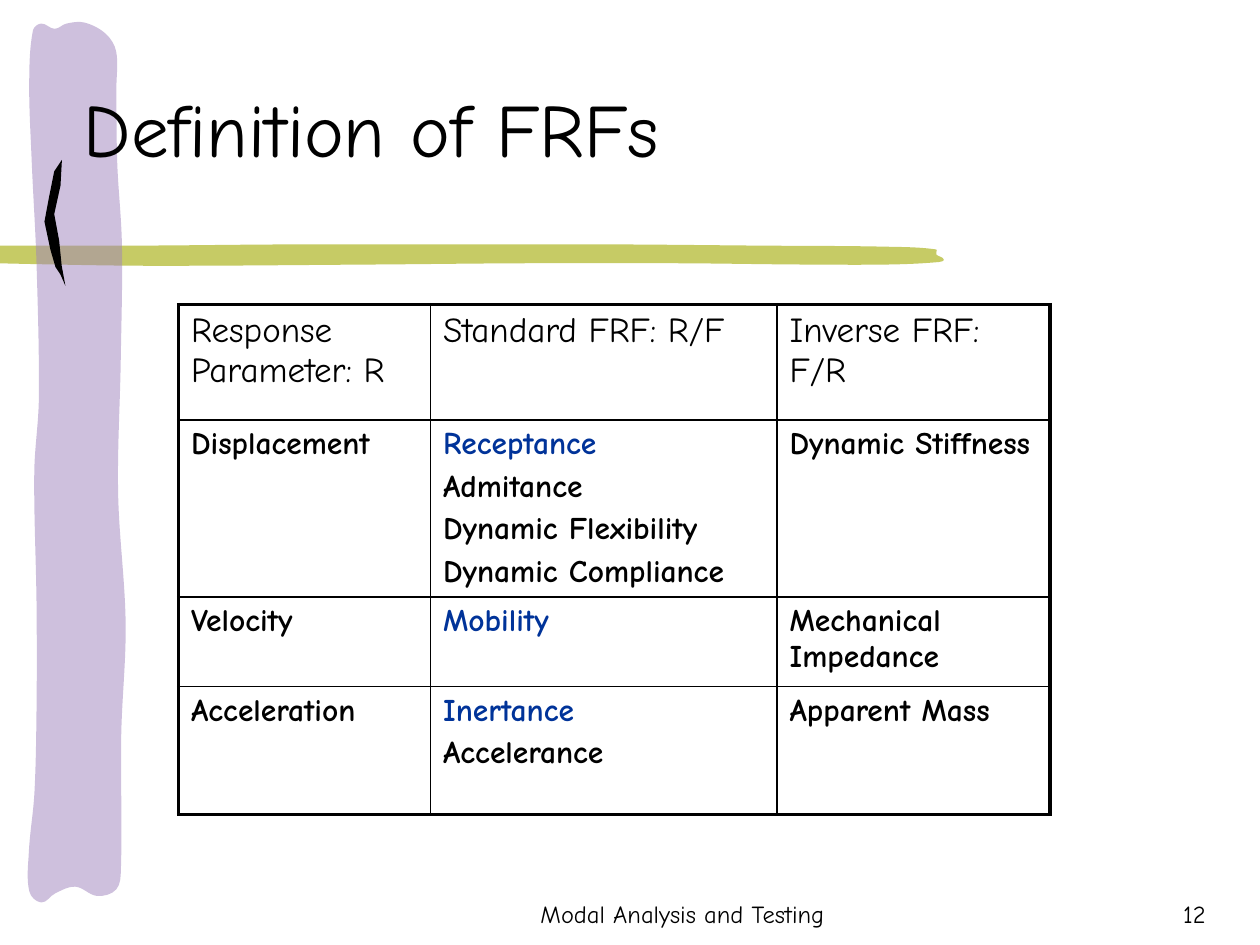
import math

from lxml import etree
from pptx import Presentation
from pptx.dml.color import RGBColor
from pptx.enum import text
from pptx.oxml import ns
from pptx.util import Pt

FONT = "Comic Neue"
COLORS = {"ink": "000000", "accent": "003399", "olive": "C6CB65", "lilac": "9F83BD"}
THIN, THICK = 1, 2.25

# Outlines, in points
OLIVE_STROKE = [
    (433, 140.4), (505, 141), (535, 142.6), (535, 145.4), (539.3, 148.3),
    (536.4, 149.8), (508, 151.2), (457, 151.2), (389.5, 150.5), (298, 150.5),
    (214.6, 151.2), (80, 151.9), (-1.4, 150.5), (-2.2, 140.4), (80, 140.4),
    (167, 139.7), (281.5, 139.7), (352, 139.7),
]
OLIVE_CORNERS = {(-1.4, 150.5), (-2.2, 140.4)}
LILAC_STROKE = [
    (20.9, 403.9), (20.9, 346.3), (19.6, 270), (22.2, 228), (20.9, 151.2),
    (18.1, 91.4), (16.7, 46.8), (18.9, 17.3), (23.6, 13.5), (31.2, 16.5),
    (38, 13.5), (48.2, 12.9), (60.5, 19.4), (66.4, 29.5), (66.5, 51),
    (67, 92.9), (69.7, 140.4), (69, 206), (67.5, 281.5), (71.8, 356.4),
    (69.3, 419.8), (69.1, 496.8), (66.4, 508.3), (55.6, 512), (43, 506.7),
    (31.6, 510.5), (23.6, 515.7), (16.8, 509.5), (16.5, 486.7), (19.7, 453),
]
INK_MARK = [
    (35.4, 91.4), (34.6, 106), (31, 122.4), (33.8, 137.5), (35.3, 152), (37.4, 163.4),
    (34.6, 157), (31.7, 152.6), (28.8, 142.6), (25.4, 126.7), (28.1, 112.3), (31, 98),
]

# Table content: one list of paragraphs per cell
ROWS = [
    [["Response Parameter: R"], ["Standard FRF: R/F"], ["Inverse FRF: F/R"]],
    [["Displacement"],
     ["Receptance", "Admitance", "Dynamic Flexibility", "Dynamic Compliance"],
     ["Dynamic Stiffness"]],
    [["Velocity"], ["Mobility"], ["Mechanical Impedance"]],
    [["Acceleration"], ["Inertance", "Accelerance"], ["Apparent Mass"]],
]
HIGHLIGHTS = {"Receptance", "Mobility", "Inertance"}
COLUMN_WIDTHS = [144, 198, 156]
ROW_HEIGHTS = [66, 101, 51.2, 73]


def rgb(name):
    return RGBColor.from_string(COLORS[name])


def write(para, words, size=18, bold=False, color="ink", align=text.PP_ALIGN.LEFT):
    span = para.add_run()
    span.text = words
    para.alignment = align
    span.font.name = FONT
    span.font.size = Pt(size)
    span.font.bold = bold
    span.font.color.rgb = rgb(color)


def curve_outline(shape, points, corners):
    """Turn the straight segments into Bezier curves through the same points."""
    def tangent(i):
        if points[i] in corners:
            return 0, 0
        (x0, y0), (x1, y1) = points[i - 1], points[(i + 1) % len(points)]
        length = math.hypot(x1 - x0, y1 - y0)
        return (x1 - x0) / length, (y1 - y0) / length

    left, top = (min(point[k] for point in points) for k in (0, 1))
    outline = shape._element.spPr.find(".//" + ns.qn("a:path"))
    for line in outline.findall(ns.qn("a:lnTo")):
        outline.remove(line)
    closing = outline.find(ns.qn("a:close"))
    for i, start in enumerate(points):
        following = (i + 1) % len(points)
        end = points[following]
        handle = math.dist(start, end) / 3
        leave, arrive = tangent(i), tangent(following)
        curve = etree.Element(ns.qn("a:cubicBezTo"))
        for x, y in (
            (start[0] + handle * leave[0], start[1] + handle * leave[1]),
            (end[0] - handle * arrive[0], end[1] - handle * arrive[1]),
            end,
        ):
            etree.SubElement(curve, ns.qn("a:pt"), x=str(round((x - left) * 100)),
                             y=str(round((y - top) * 100)))
        closing.addprevious(curve)


def add_outline(page, points, color, alpha=None, curved=True, corners=()):
    # Builder units are hundredths of a point
    scaled = [(x * 100, y * 100) for x, y in points]
    builder = page.shapes.build_freeform(*scaled[0], scale=Pt(0.01))
    builder.add_line_segments(scaled[1:], close=True)
    shape = builder.convert_to_shape()
    if curved:
        curve_outline(shape, points, corners)
    shape.shadow.inherit = False
    shape.line.fill.background()
    shape.fill.solid()
    shape.fill.fore_color.rgb = rgb(color)
    if alpha:
        tone = shape._element.spPr.find(".//" + ns.qn("a:srgbClr"))
        etree.SubElement(tone, ns.qn("a:alpha"), val=str(alpha * 1000))


def add_footer(page, words, left, width, align):
    box = page.shapes.add_textbox(Pt(left), Pt(498), Pt(width), Pt(36))
    box.text_frame.word_wrap = True
    box.text_frame.vertical_anchor = text.MSO_ANCHOR.BOTTOM
    write(box.text_frame.paragraphs[0], words, size=14, align=align)


def add_title(page, words):
    title = page.shapes.title
    title.left, title.top, title.width, title.height = Pt(40.8), Pt(43.4), Pt(677), Pt(59)
    title.text_frame.vertical_anchor = text.MSO_ANCHOR.MIDDLE
    write(title.text_frame.paragraphs[0], words, size=43)
    # Bring the title in front of the brush strokes
    page.shapes._spTree.append(title._element)


def set_borders(cell, widths):
    properties = cell._tc.get_or_add_tcPr()
    for position, (side, width) in enumerate(widths.items()):
        line = etree.Element(ns.qn("a:ln" + side), w=str(Pt(width)))
        fill = etree.SubElement(line, ns.qn("a:solidFill"))
        etree.SubElement(fill, ns.qn("a:srgbClr"), val=COLORS["ink"])
        properties.insert(position, line)


def add_frf_table(page):
    last_row, last_column = len(ROWS) - 1, len(COLUMN_WIDTHS) - 1
    table = page.shapes.add_table(
        len(ROWS), len(COLUMN_WIDTHS), Pt(102), Pt(174),
        Pt(sum(COLUMN_WIDTHS)), Pt(sum(ROW_HEIGHTS))).table
    table.first_row = table.horz_banding = False
    for column, width in zip(table.columns, COLUMN_WIDTHS):
        column.width = Pt(width)
    for r, (row, height) in enumerate(zip(ROWS, ROW_HEIGHTS)):
        table.rows[r].height = Pt(height)
        for c, lines in enumerate(row):
            cell = table.cell(r, c)
            cell.fill.background()
            for i, words in enumerate(lines):
                frame = cell.text_frame
                para = frame.add_paragraph() if i else frame.paragraphs[0]
                if i:
                    para.space_before = Pt(3.6)
                write(para, words, size=18 if r else 20, bold=r > 0,
                      color="accent" if words in HIGHLIGHTS else "ink")
            set_borders(cell, {
                "L": THICK if c == 0 else THIN,
                "R": THICK if c == last_column else THIN,
                "T": THICK if r == 0 else THIN,
                "B": THICK if r == last_row else THIN,
            })


def main():
    deck = Presentation()
    deck.slide_width, deck.slide_height = Pt(720), Pt(540)
    page = deck.slides.add_slide(deck.slide_layouts[5])

    # Brush strokes
    add_outline(page, OLIVE_STROKE, "olive", corners=OLIVE_CORNERS)
    add_outline(page, LILAC_STROKE, "lilac", alpha=50)
    add_outline(page, INK_MARK, "ink", curved=False)

    # Footer, title and table
    add_footer(page, "Modal Analysis and Testing", 276, 228, text.PP_ALIGN.CENTER)
    add_footer(page, "12", 546, 150, text.PP_ALIGN.RIGHT)
    add_title(page, "Definition of FRFs")
    add_frf_table(page)
    deck.save("out.pptx")


if __name__ == "__main__":
    main()
